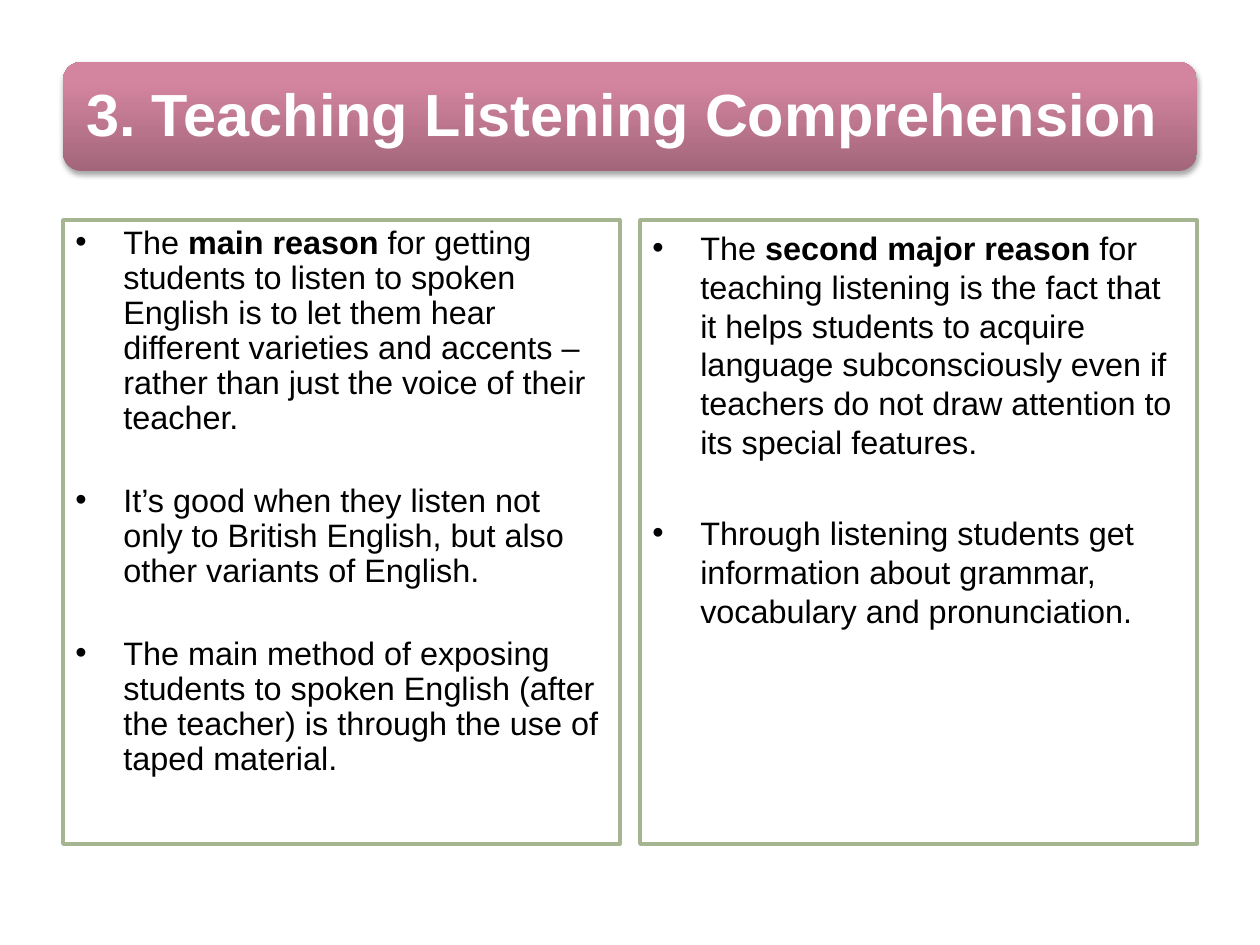
"""Build the slide on teaching listening comprehension with two bulleted panels."""
import copy

import lxml.etree
import pptx
import pptx.dml.color
import pptx.enum.shapes
import pptx.enum.text
import pptx.oxml.ns
import pptx.util

TITLE = "3. Teaching Listening Comprehension"
PANELS = [
    {
        "points": [
            [("The ", False), ("main reason ", True),
             ("for getting students to listen to spoken English is to let them hear "
              "different varieties and accents – rather than just the voice of their "
              "teacher.", False)],
            [("It’s good when they listen not only to British English, but also other "
              "variants of English.", False)],
            [("The main method of exposing students to spoken English (after the teacher) "
              "is through the use of taped material.", False)],
        ],
        "line": 20, "gap": 27.4, "inset": 6,
    },
    {
        "points": [
            [("The ", False), ("second major reason ", True),
             ("for teaching listening is the fact that it helps students to acquire "
              "language subconsciously even if teachers do not draw attention to its "
              "special features.", False)],
            [("Through listening students get information about grammar, vocabulary and "
              "pronunciation.", False)],
        ],
        "line": 22.2, "gap": 29.8, "inset": 8,
    },
]
COLOURS = {"text": "000000", "title": "FFFFFF", "panel": "FFFFFF", "border": "A5B592"}
BAR_STOPS = [(0, "A2667A"), (0.8, "D3849F"), (1, "D5849F")]
SHADOW = {"blurRad": 3.1, "dist": 1.8}
BAR = (63, 62, 1134, 109)
TITLE_AREA = (68, 67, 1124, 100)
PANEL_AREA = (63, 220, 557, 624)
PANEL_GAP = 20
INDENT = 48
SCALE = 914400 // 126


def px(value):
    return pptx.util.Emu(value * SCALE)


def rgb(text):
    return pptx.dml.color.RGBColor.from_string(text)


def apply(target, **values):
    for name, value in values.items():
        setattr(target, name, value)


def place(shape, area):
    apply(shape, **dict(zip(("left", "top", "width", "height"), map(px, area))))


def add_child(parent, tag, **attributes):
    return lxml.etree.SubElement(parent, pptx.oxml.ns.qn(tag), attributes)


def add_span(para, text, size, colour, bold):
    span = para.add_run()
    span.text = text
    apply(span.font, name="Arial", size=pptx.util.Pt(size), bold=bold)
    span.font.color.rgb = rgb(colour)


def add_bar(page):
    kind = pptx.enum.shapes.MSO_SHAPE.ROUNDED_RECTANGLE
    bar = page.shapes.add_shape(kind, *map(px, BAR))
    bar.line.fill.background()
    bar.fill.gradient()
    bar.fill.gradient_angle = 90
    stop_list = bar.element.spPr.find(".//" + pptx.oxml.ns.qn("a:gsLst"))
    stop_list.append(copy.deepcopy(stop_list[-1]))
    for stop, (position, colour) in zip(bar.fill.gradient_stops, BAR_STOPS):
        stop.position = position
        stop.color.rgb = rgb(colour)
    bar.shadow.inherit = False
    effects = bar.element.spPr.find(pptx.oxml.ns.qn("a:effectLst"))
    lengths = {name: str(pptx.util.Pt(value)) for name, value in SHADOW.items()}
    shadow = add_child(effects, "a:outerShdw", **lengths, dir="5400000", rotWithShape="0")
    add_child(add_child(shadow, "a:srgbClr", val="000000"), "a:alpha", val="35000")
    return bar


def set_title(title):
    place(title, TITLE_AREA)
    frame = title.text_frame
    apply(frame, word_wrap=True, auto_size=pptx.enum.text.MSO_AUTO_SIZE.NONE,
          vertical_anchor=pptx.enum.text.MSO_ANCHOR.MIDDLE,
          margin_left=px(18), margin_right=px(18), margin_top=px(18), margin_bottom=px(18))
    para = frame.paragraphs[0]
    apply(para, alignment=pptx.enum.text.PP_ALIGN.LEFT, line_spacing=0.9)
    add_span(para, TITLE, 34, COLOURS["title"], True)


def add_panel(page, column, panel):
    left, top, width, height = PANEL_AREA
    area = (left + column * (width + PANEL_GAP), top, width, height)
    box = page.shapes.add_shape(pptx.enum.shapes.MSO_SHAPE.RECTANGLE, *map(px, area))
    box.shadow.inherit = False
    box.fill.solid()
    box.fill.fore_color.rgb = rgb(COLOURS["panel"])
    box.line.color.rgb = rgb(COLOURS["border"])
    box.line.width = pptx.util.Pt(2)
    frame = box.text_frame
    apply(frame, word_wrap=True, vertical_anchor=pptx.enum.text.MSO_ANCHOR.TOP,
          margin_top=px(panel["inset"]))
    for index, point in enumerate(panel["points"]):
        para = frame.add_paragraph() if index else frame.paragraphs[0]
        apply(para, alignment=pptx.enum.text.PP_ALIGN.LEFT,
              line_spacing=pptx.util.Pt(panel["line"]),
              space_before=pptx.util.Pt(panel["gap"] if index else 0))
        for text, bold in point:
            add_span(para, text, 18.5, COLOURS["text"], bold)
        settings = para._p.get_or_add_pPr()
        settings.set("marL", str(px(INDENT)))
        settings.set("indent", str(-px(INDENT)))
        add_child(settings, "a:buFont", typeface="Arial")
        add_child(settings, "a:buChar", char="•")


def main():
    deck = pptx.Presentation()
    apply(deck, slide_width=pptx.util.Inches(10), slide_height=pptx.util.Inches(7.5))
    page = deck.slides.add_slide(deck.slide_layouts[5])
    title = page.shapes.title
    title.element.addprevious(add_bar(page).element)
    set_title(title)
    for column, panel in enumerate(PANELS):
        add_panel(page, column, panel)
    deck.save("out.pptx")


if __name__ == "__main__":
    main()
